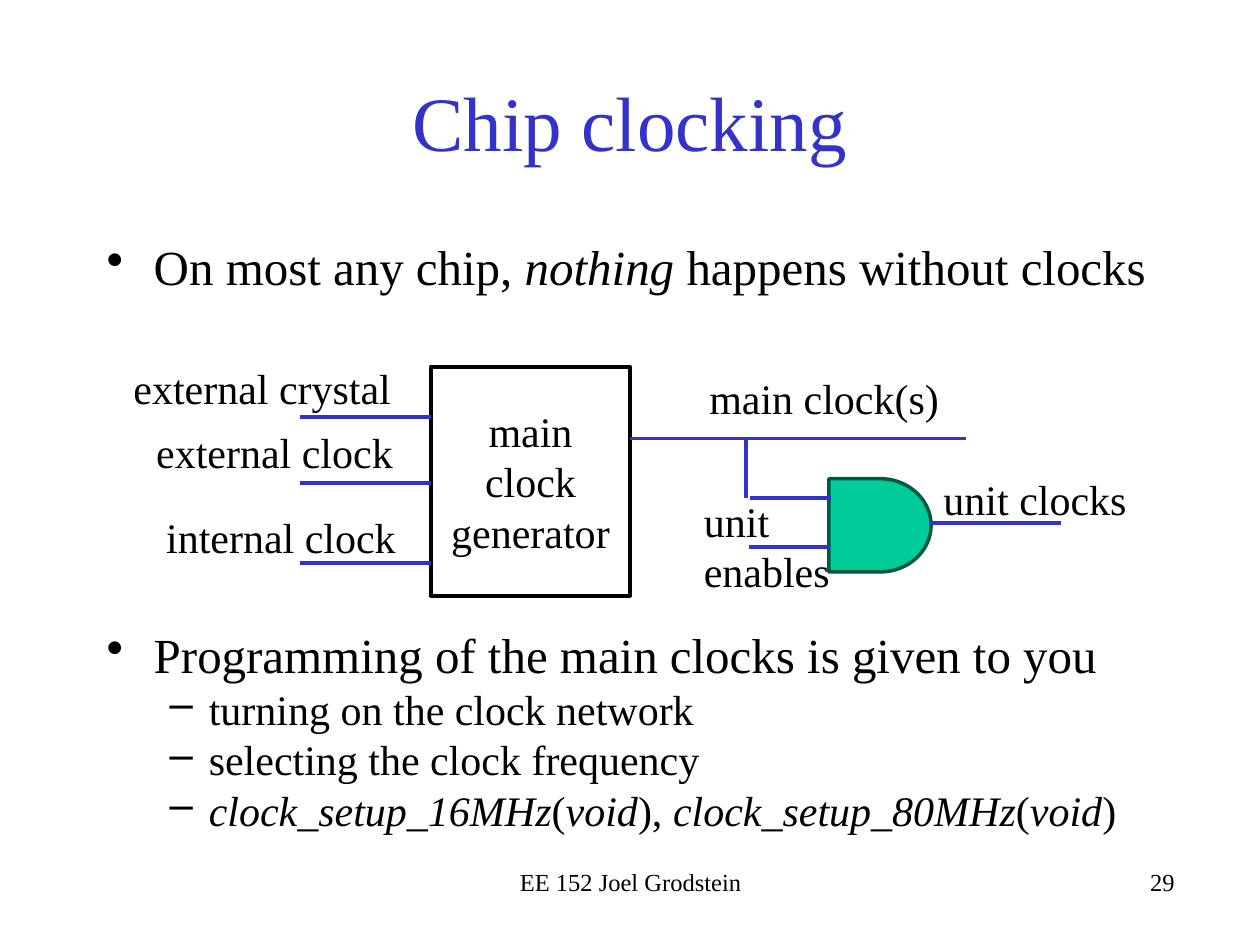
from lxml.etree import SubElement
from pptx import Presentation
from pptx.dml.color import RGBColor
from pptx.enum.shapes import MSO_CONNECTOR as Connector, MSO_SHAPE as Shape
from pptx.enum.text import MSO_ANCHOR as Anchor, PP_ALIGN as Align
from pptx.oxml.ns import qn
from pptx.util import Cm, Pt

BLACK = RGBColor(0x00, 0x00, 0x00)
BLUE = RGBColor(0x33, 0x33, 0xCC)
GREEN = RGBColor(0x00, 0xCC, 0x99)
DARK_GREEN = RGBColor(0x00, 0x59, 0x43)


class SlideBuilder:
    font_name = "Times New Roman"
    label_size = 24
    line_width = 2.25
    bullets = [("•", 0.95, 0.95, 28), ("–", 2.06, 0.79, 24)]

    def __init__(self, slide):
        self.slide = slide

    def format_paragraph(self, paragraph, size, color=BLACK, align=Align.LEFT):
        paragraph.alignment = align
        for run in paragraph.runs:
            run.font.name = self.font_name
            run.font.size = Pt(size)
            run.font.color.rgb = color

    def box(self, left, top, width, height):
        shape = self.slide.shapes.add_textbox(Cm(left), Cm(top), Cm(width), Cm(height))
        shape.text_frame.word_wrap = True
        return shape.text_frame

    def text(self, text, left, top, width, height=1.27, size=label_size,
             color=BLACK, align=Align.LEFT, anchor=Anchor.TOP):
        text_frame = self.box(left, top, width, height)
        text_frame.text = text
        text_frame.vertical_anchor = anchor
        self.format_paragraph(text_frame.paragraphs[0], size, color, align)

    def bullet_list(self, items, left, top, width, height):
        text_frame = self.box(left, top, width, height)
        for index, (level, parts) in enumerate(items):
            paragraph = text_frame.paragraphs[0] if index == 0 else text_frame.add_paragraph()
            paragraph.level = level
            for text, italic in parts:
                run = paragraph.add_run()
                run.text = text
                run.font.italic = italic
            character, margin, hanging, size = self.bullets[level]
            self.format_paragraph(paragraph, size)
            properties = paragraph._p.get_or_add_pPr()
            properties.set("marL", str(Cm(margin)))
            properties.set("indent", str(-Cm(hanging)))
            SubElement(properties, qn("a:buChar")).set("char", character)

    def shape(self, kind, left, top, width, height, line_color, line_width=line_width,
              fill=None, text=""):
        shape = self.slide.shapes.add_shape(kind, Cm(left), Cm(top), Cm(width), Cm(height))
        shape.shadow.inherit = False
        if fill is None:
            shape.fill.background()
        else:
            shape.fill.solid()
            shape.fill.fore_color.rgb = fill
        shape.line.color.rgb = line_color
        shape.line.width = Pt(line_width)
        if text:
            text_frame = shape.text_frame
            text_frame.text = text
            text_frame.word_wrap = True
            text_frame.vertical_anchor = Anchor.MIDDLE
            self.format_paragraph(text_frame.paragraphs[0], self.label_size, align=Align.CENTER)

    def wire(self, x1, y1, x2, y2):
        connector = self.slide.shapes.add_connector(
            Connector.STRAIGHT, Cm(x1), Cm(y1), Cm(x2), Cm(y2))
        connector.line.color.rgb = BLUE
        connector.line.width = Pt(self.line_width)
        SubElement(connector._element.spPr, qn("a:effectLst"))


def main():
    presentation = Presentation()
    presentation.slide_width = Cm(25.4)
    presentation.slide_height = Cm(19.05)
    builder = SlideBuilder(presentation.slides.add_slide(presentation.slide_layouts[6]))

    builder.text("Chip clocking", 1.9, 0.85, 21.6, 3.17, 44, BLUE, Align.CENTER, Anchor.MIDDLE)
    builder.bullet_list([
        (0, [("On most any chip, ", False), ("nothing ", True),
             ("happens without clocks", False)]),
    ], 1.9, 4.65, 21.6, 1.27)
    builder.text("EE 152 Joel Grodstein", 8.69, 17.35, 8.05, size=14, align=Align.CENTER)
    builder.text("29", 15.88, 17.35, 8.05, size=14, align=Align.RIGHT)

    builder.shape(Shape.RECTANGLE, 8.69, 7.39, 4.01, 4.62, BLACK, text="main clock generator")
    builder.shape(Shape.FLOWCHART_DELAY, 16.71, 9.65, 2.06, 1.88, DARK_GREEN, 2, GREEN)

    for label, left, top, width in [
        ("external crystal", 2.44, 7.19, 5.97),
        ("external clock", 2.9, 8.48, 5.97),
        ("internal clock", 3.1, 10.19, 5.97),
        ("main clock(s)", 14.05, 7.39, 5.31),
        ("unit clocks", 18.77, 9.42, 4.72),
        ("unit enables", 13.94, 9.86, 3.15),
    ]:
        builder.text(label, left, top, width)

    for input_y in (8.41, 9.73, 11.35):
        builder.wire(6.05, input_y, 8.69, input_y)
    for start_x, y, end_x in [
        (12.7, 8.84, 19.48),
        (18.75, 10.54, 21.39),
        (15.11, 10.03, 16.76),
        (15.09, 11.02, 16.74),
    ]:
        builder.wire(start_x, y, end_x, y)
    builder.wire(15.04, 8.84, 15.04, 10.03)

    builder.bullet_list([
        (0, [("Programming of the main clocks is given to you", False)]),
        (1, [("turning on the clock network", False)]),
        (1, [("selecting the clock frequency", False)]),
        (1, [("clock_setup_16MHz", True), ("(", False), ("void", True), ("), ", False),
             ("clock_setup_80MHz", True), ("(", False), ("void", True), (")", False)]),
    ], 1.9, 12.47, 21.6, 5.41)

    presentation.save("out.pptx")


if __name__ == "__main__":
    main()
